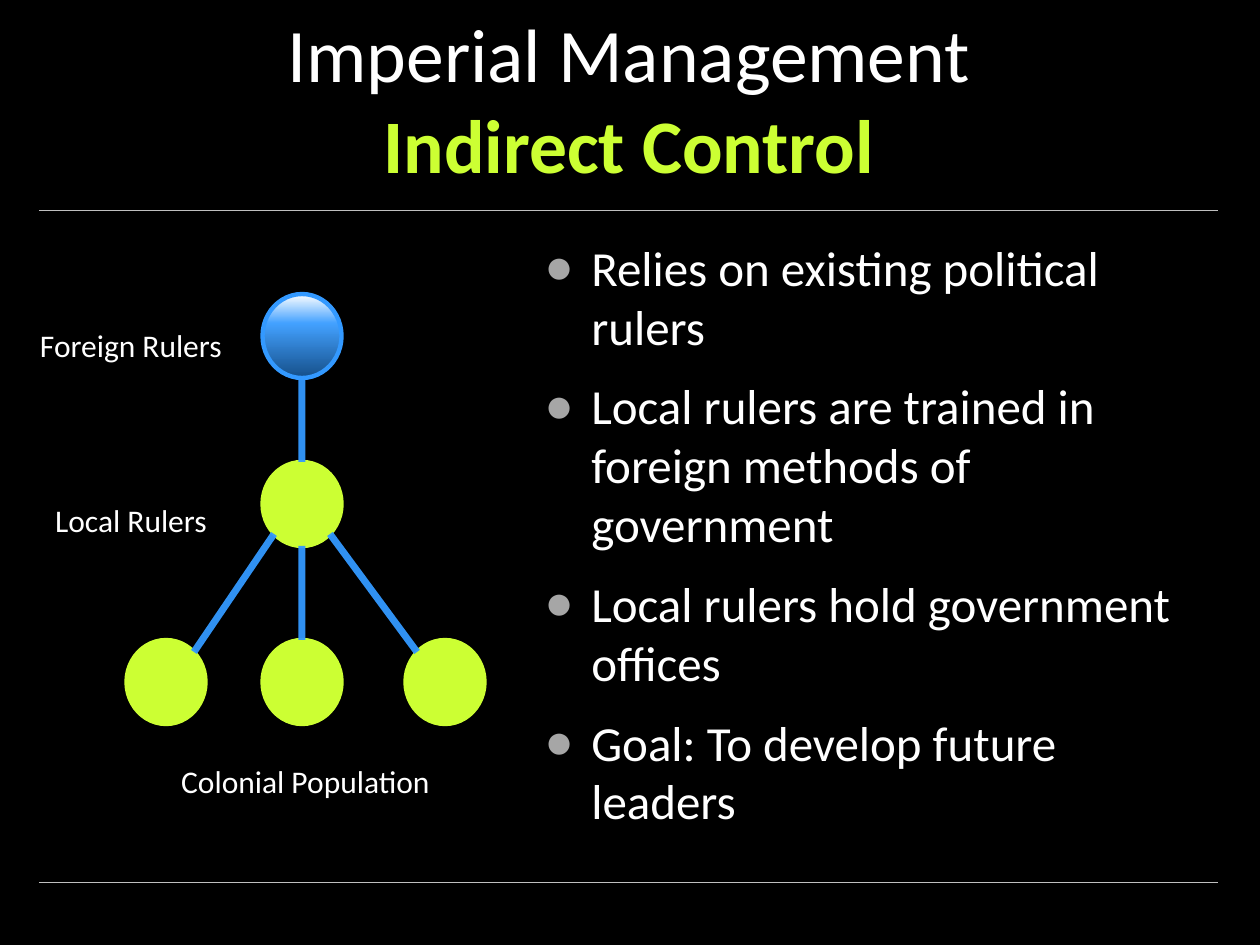
from copy import deepcopy

from lxml import etree
from pptx import Presentation
from pptx import util as u
from pptx.dml.color import RGBColor
from pptx.enum import shapes, text
from pptx.oxml.ns import qn

COLORS = {
    "ground": "000000", "ink": "FFFFFF", "lime": "CCFF33", "blue": "3399FF",
    "rule": "BFBFBF", "bullet": "A6A6A6", "deep": "154F89", "sky": "43A1FF",
}
EMU_PER_PX = 914400 / 126


def px(length):
    return u.Emu(round(length * EMU_PER_PX))


def rgb(name):
    return RGBColor.from_string(COLORS[name])


def apply(target, values):
    for name, value in values.items():
        setattr(target, name, value)


class Deck:
    font = "Calibri"

    def __init__(self, width, height):
        self.prs = Presentation()
        apply(self.prs, {"slide_width": px(width), "slide_height": px(height)})
        self.slide = self.prs.slides.add_slide(self.prs.slide_layouts[6])
        ground = self.slide.background.fill
        ground.solid()
        ground.fore_color.rgb = rgb("ground")

    def line(self, start, end, color, weight, alpha=None):
        link = self.slide.shapes.add_connector(
            shapes.MSO_CONNECTOR.STRAIGHT, *map(px, (*start, *end)))
        link.line.color.rgb = rgb(color)
        link.line.width = u.Pt(weight)
        properties = link._element.spPr
        if alpha:
            tint = properties.find(".//" + qn("a:srgbClr"))
            etree.SubElement(tint, qn("a:alpha"), val=str(alpha * 1000))
        etree.SubElement(properties, qn("a:effectLst"))

    def circle(self, center, size, color, stops=None):
        (x, y), (w, h) = center, size
        node = self.slide.shapes.add_shape(
            shapes.MSO_SHAPE.OVAL, *map(px, (x - w / 2, y - h / 2, w, h)))
        node.shadow.inherit = False
        node.line.color.rgb = rgb(color)
        node.line.width = u.Pt(2.5)
        if stops:
            self.shade(node, stops)
        else:
            node.fill.solid()
            node.fill.fore_color.rgb = rgb(color)

    def shade(self, node, stops):
        node.fill.gradient()
        node.fill.gradient_angle = 90
        ramp = node._element.spPr.find(".//" + qn("a:gsLst"))
        ramp.append(deepcopy(ramp[-1]))
        for stop, (position, color) in zip(node.fill.gradient_stops, stops):
            stop.color.rgb = rgb(color)
            stop.position = position

    def label(self, box, paragraphs, size, align=text.PP_ALIGN.CENTER,
              anchor=text.MSO_ANCHOR.TOP):
        frame = self.slide.shapes.add_textbox(*map(px, box)).text_frame
        apply(frame, {"word_wrap": True, "vertical_anchor": anchor})
        for index, parts in enumerate(paragraphs):
            paragraph = frame.add_paragraph() if index else frame.paragraphs[0]
            paragraph.alignment = align
            for part, (words, color, bold) in enumerate(parts):
                if part:
                    paragraph.add_line_break()
                run = paragraph.add_run()
                run.text = words
                apply(run.font, {"name": self.font, "size": u.Pt(size), "bold": bold})
                run.font.color.rgb = rgb(color)
        return frame

    def bullets(self, box, points, size):
        frame = self.label(box, [[(point, "ink", False)] for point in points],
                           size, text.PP_ALIGN.LEFT)
        for paragraph in frame.paragraphs:
            paragraph.space_before = u.Pt(12)
            properties = paragraph._p.get_or_add_pPr()
            properties.set("marL", str(px(94)))
            properties.set("indent", str(-px(47)))
            tint = etree.SubElement(properties, qn("a:buClr"))
            etree.SubElement(tint, qn("a:srgbClr"), val=COLORS["bullet"])
            etree.SubElement(properties, qn("a:buFont"), typeface="Arial")
            etree.SubElement(properties, qn("a:buChar"), char="●")


def main():
    deck = Deck(1260, 945)
    for rule_y in (210, 882):
        deck.line((39, rule_y), (1218, rule_y), "rule", 0.25)

    deck.label((88, 15, 1082, 180),
               [[("Imperial Management", "ink", False),
                 ("Indirect Control", "lime", True)]],
               43.2, anchor=text.MSO_ANCHOR.BOTTOM)
    deck.bullets((485, 231, 733, 702), [
        "Relies on existing political rulers",
        "Local rulers are trained in foreign methods of government",
        "Local rulers hold government offices",
        "Goal: To develop future leaders",
    ], 28)

    node_size = (79, 84)
    trunk_x, foreign_y, local_y, colony_y = 302, 336, 504, 682
    deck.circle((trunk_x, foreign_y), node_size, "blue",
                [(0, "deep"), (0.65, "sky"), (1, "ink")])
    deck.circle((trunk_x, local_y), node_size, "lime")
    for colony_x in (166, trunk_x, 445):
        deck.circle((colony_x, colony_y), node_size, "lime")

    for start, end in (
        ((trunk_x, foreign_y + 42), (trunk_x, local_y - 42)),
        ((trunk_x - 28, local_y + 30), (194, colony_y - 30)),
        ((trunk_x, local_y + 42), (trunk_x, colony_y - 42)),
        ((trunk_x + 28, local_y + 30), (417, colony_y - 30)),
    ):
        deck.line(start, end, "blue", 4, alpha=95)

    for group, box in (
        ("Foreign Rulers", (0, 320, 262, 50)),
        ("Local Rulers", (0, 495, 262, 50)),
        ("Colonial Population", (126, 756, 359, 53)),
    ):
        deck.label(box, [[(group, "ink", False)]], 18)

    deck.prs.save("out.pptx")


if __name__ == "__main__":
    main()
